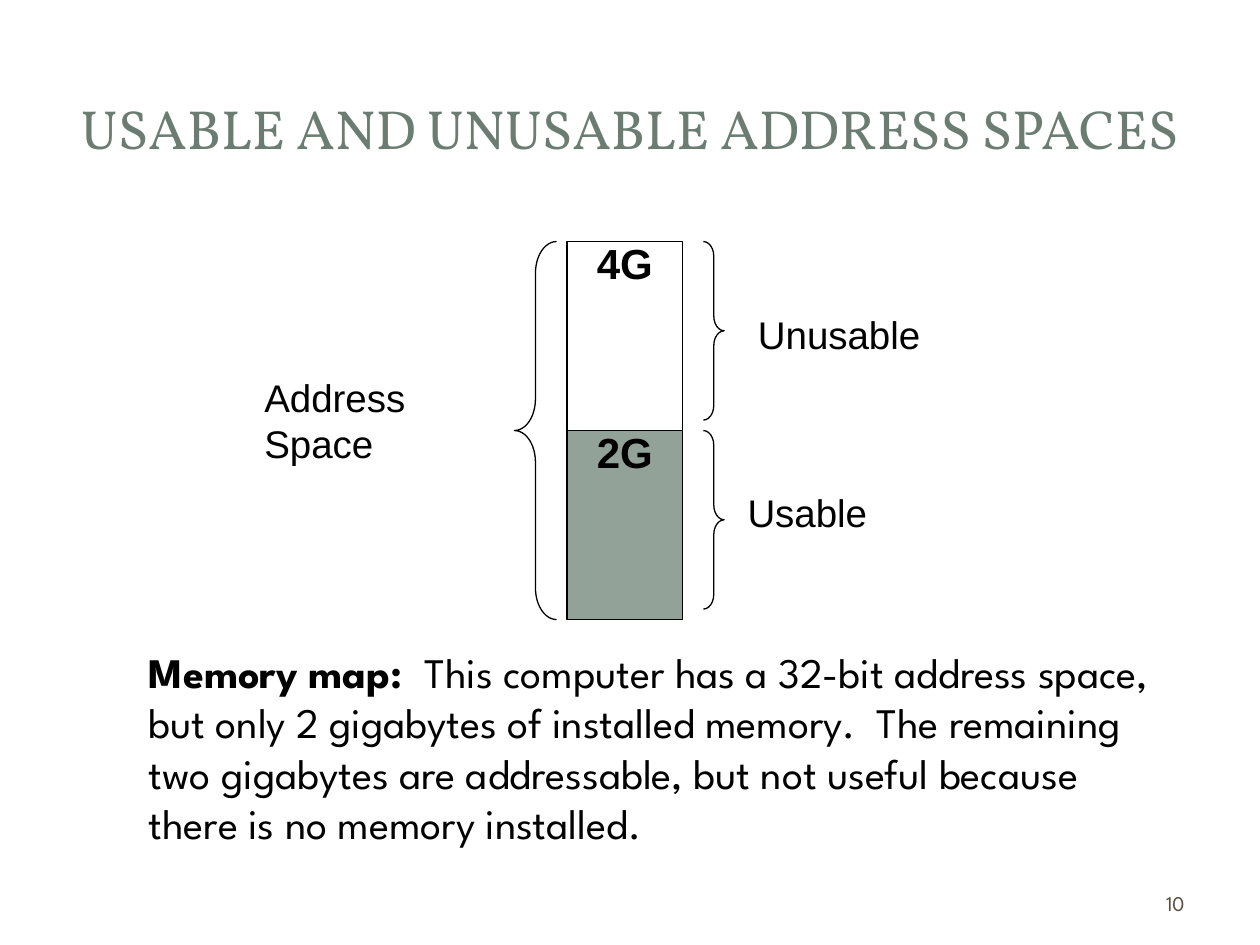
import pptx
import pptx.dml.color
import pptx.enum.shapes
import pptx.enum.text
import pptx.util

Cm = pptx.util.Cm
Pt = pptx.util.Pt
Shape = pptx.enum.shapes.MSO_SHAPE
Align = pptx.enum.text.PP_ALIGN
Anchor = pptx.enum.text.MSO_ANCHOR

BLACK = "000000"
BODY_FONT = "League Spartan"


def colour(value):
    return pptx.dml.color.RGBColor.from_string(value)


def write(para, text, font="Arial", size=22, bold=False, ink=BLACK):
    for index, line in enumerate(text.split("\n")):
        if index:
            para.add_line_break()
        span = para.add_run()
        span.text = line
        span.font.name = font
        span.font.size = Pt(size)
        span.font.bold = bold
        span.font.color.rgb = colour(ink)


class Slide:
    line_colour = BLACK
    line_width = 0.75

    def __init__(self, deck):
        self.page = deck.slides.add_slide(deck.slide_layouts[6])

    def shape(self, kind, left, top, width, height, fill=None, bend=None):
        shape = self.page.shapes.add_shape(kind, Cm(left), Cm(top), Cm(width), Cm(height))
        shape.shadow.inherit = False
        if fill:
            shape.fill.solid()
            shape.fill.fore_color.rgb = colour(fill)
        else:
            shape.fill.background()
        shape.line.color.rgb = colour(self.line_colour)
        shape.line.width = Pt(self.line_width)
        if bend:
            shape.adjustments[0] = bend

    def text(self, left, top, width, height, text="", align=Align.LEFT, anchor=Anchor.TOP, **style):
        box = self.page.shapes.add_textbox(Cm(left), Cm(top), Cm(width), Cm(height))
        frame = box.text_frame
        frame.word_wrap = True
        frame.vertical_anchor = anchor
        para = frame.paragraphs[0]
        para.alignment = align
        if text:
            write(para, text, **style)
        return para


def main():
    deck = pptx.Presentation()
    deck.slide_width, deck.slide_height = Cm(25.4), Cm(19.05)
    slide = Slide(deck)

    slide.text(0.84, 1.68, 23.7, 1.78, "USABLE AND UNUSABLE ADDRESS SPACES", align=Align.CENTER,
               anchor=Anchor.MIDDLE, font="Vollkorn", size=31.5, ink="6B7D72")

    left, top, width, half = 11.43, 4.87, 2.33, 3.81
    slide.shape(Shape.LEFT_BRACE, 10.37, top, 0.85, 2 * half, bend=0.75)
    halves = [("4G", "FFFFFF", "Unusable", 15.03, 6.15), ("2G", "93A299", "Usable", 14.82, 9.74)]
    for index, (size, fill, label, label_left, label_top) in enumerate(halves):
        start = top + index * half
        slide.shape(Shape.RECTANGLE, left, start, width, half, fill=fill)
        slide.shape(Shape.RIGHT_BRACE, 14.18, start, 0.42, 3.6, bend=0.71)
        slide.text(left, start - 0.21, width, 1.27, size, align=Align.CENTER, size=24, bold=True)
        slide.text(label_left, label_top, 5.72, 1.19, label)
    slide.text(5.08, 7.41, 5.72, 2.12, "Address\nSpace")

    para = slide.text(2.75, 12.91, 21.17, 4.37)
    write(para, "Memory map:  ", font=BODY_FONT, size=24, bold=True)
    write(para, "This computer has a 32-bit address space, but only 2 gigabytes of installed memory.  "
          "The remaining two gigabytes are addressable, but not useful because "
          "there is no memory installed.", font=BODY_FONT, size=24)

    slide.text(18.84, 17.58, 5.29, 1.27, "10", align=Align.RIGHT, anchor=Anchor.MIDDLE,
               font=BODY_FONT, size=12, ink="564B3C")
    deck.save("out.pptx")


if __name__ == "__main__":
    main()
